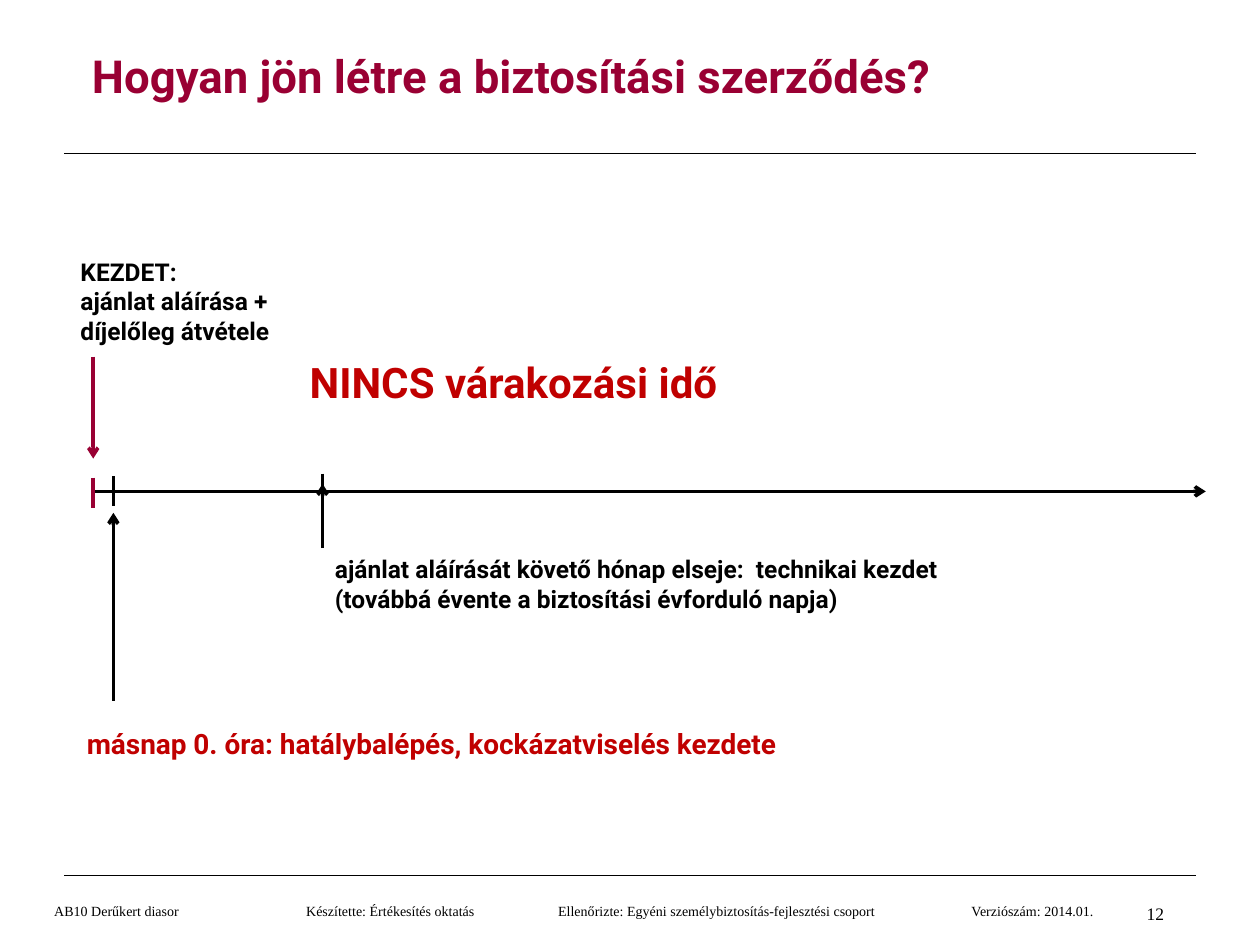
from pptx import Presentation
from pptx.dml.color import RGBColor
from pptx.enum.shapes import MSO_CONNECTOR
from pptx.enum.text import MSO_ANCHOR, PP_ALIGN
from pptx.oxml.ns import qn
from pptx.util import Emu, Pt
from lxml.etree import SubElement

PX = 9144
BLACK, WINE, RED = "000000", "990033", "C00000"
HEAD, FOOT = "Roboto", "Times New Roman"


def px(n):
    return Emu(n * PX)


def rgb(color):
    return RGBColor.from_string(color)


def add_text(s, box, text, size, color=BLACK, font=HEAD, bold=True, wrap=True,
             align=PP_ALIGN.LEFT, anchor=MSO_ANCHOR.TOP, inset=(10, 5), tabs=()):
    tf = s.shapes.add_textbox(*map(px, box)).text_frame
    tf.word_wrap = wrap
    tf.vertical_anchor = anchor
    tf.margin_left = tf.margin_right = px(inset[0])
    tf.margin_top = tf.margin_bottom = px(inset[1])
    tf.text = text
    for p in tf.paragraphs:
        p.alignment = align
        if tabs:
            stops = SubElement(p._p.get_or_add_pPr(), qn("a:tabLst"))
            for pos in tabs:
                SubElement(stops, qn("a:tab"), pos=str(px(pos)), algn="l")
        for r in p.runs:
            r.font.name = font
            r.font.size = Pt(size)
            r.font.bold = bold
            r.font.color.rgb = rgb(color)


def add_line(s, x1, y1, x2, y2, color=BLACK, width=2, arrow=False):
    c = s.shapes.add_connector(MSO_CONNECTOR.STRAIGHT, *map(px, (x1, y1, x2, y2)))
    c.line.color.rgb = rgb(color)
    c.line.width = Pt(width)
    if arrow:
        SubElement(c.line._get_or_add_ln(), qn("a:tailEnd"), type="arrow")
    SubElement(c._element.spPr, qn("a:effectLst"))


def add_header(s, x, y, w, h):
    add_text(s, (x - 31, y, 772, 77), "Hogyan jön létre a biztosítási szerződés?", 26,
             WINE, align=PP_ALIGN.CENTER, anchor=MSO_ANCHOR.MIDDLE)
    add_line(s, x, y + h, x + w, y + h, width=0.5)


def add_timeline(s, x, y, w, h):
    axis = y + 191
    next_day, next_month = x + 16, x + 182

    add_line(s, x, axis, x + w, axis, arrow=True)
    for tick, top, color in ((x, axis - 11, WINE), (next_day, axis - 12, BLACK),
                             (next_month, axis - 14, BLACK)):
        add_line(s, tick, top, tick, top + 24, color)
    for tick, start, end, color in ((x, axis - 107, axis - 26, WINE),
                                    (next_day, axis + 166, axis + 17, BLACK),
                                    (next_month, axis + 45, axis - 6, BLACK)):
        add_line(s, tick, start, tick, end, color, arrow=True)

    add_text(s, (x - 20, y, 178, 81),
             "KEZDET:\najánlat aláírása +\ndíjelőleg átvétele", 14, wrap=False)
    add_text(s, (x + 162, y + 79, 376, 50), "NINCS várakozási idő", 24, RED, wrap=False)
    add_text(s, (next_month, axis + 45, 533, 57),
             "ajánlat aláírását követő hónap elseje:  technikai kezdet\n"
             "(továbbá évente a biztosítási évforduló napja)", 14, wrap=False)
    add_text(s, (x - 15, y + h - 64, 779, 64),
             "másnap 0. óra: hatálybalépés, kockázatviselés kezdete", 16, RED)


def add_footer(s, x, y, w, h):
    add_line(s, x, y, x + w, y, width=0.5)
    credits = ("AB10 Derűkert diasor", "Készítette: Értékesítés oktatás",
               "Ellenőrizte: Egyéni személybiztosítás-fejlesztési csoport",
               "Verziószám: 2014.01.")
    add_text(s, (x - 8, y + 11, 931, h - 11), "\t".join(credits), 8, font=FOOT,
             bold=False, anchor=MSO_ANCHOR.MIDDLE, inset=(0, 0), tabs=(200, 400, 728))
    add_text(s, (x + w - 39, y + 22, 39, 17), "12", 10, font=FOOT, bold=False,
             inset=(0, 0))


def main():
    prs = Presentation()
    prs.slide_width, prs.slide_height = px(1000), px(750)
    s = prs.slides.add_slide(prs.slide_layouts[6])
    add_header(s, 51, 21, 898, 101)
    add_timeline(s, 74, 199, 883, 437)
    add_footer(s, 51, 695, 898, 45)
    prs.save("out.pptx")


if __name__ == "__main__":
    main()
